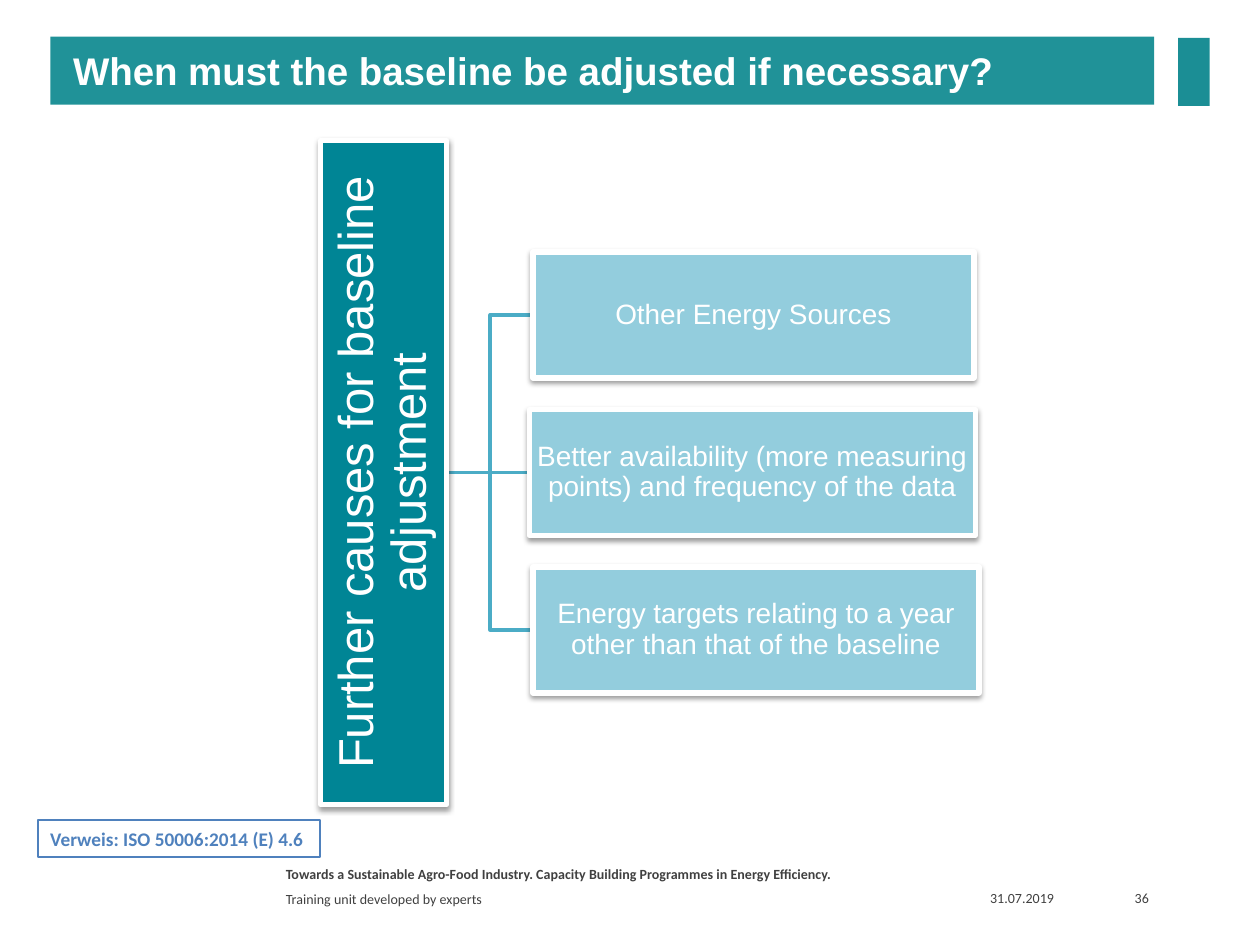
from lxml import etree
from pptx import Presentation
from pptx.dml.color import RGBColor
from pptx.enum.shapes import MSO_CONNECTOR, MSO_SHAPE
from pptx.enum.text import MSO_ANCHOR, MSO_AUTO_SIZE, PP_ALIGN
from pptx.oxml import parse_xml
from pptx.oxml.ns import nsdecls, qn
from pptx.util import Inches, Pt

GREY = "404040"
WHITE = "FFFFFF"
BLUE = "4F81BD"
LINK = "4BACC6"
AXIS_Y = 3.75


def rgb(value):
    return RGBColor.from_string(value)


def write(s, text, size, color, font="Calibri", bold=False, align=PP_ALIGN.LEFT,
          anchor=MSO_ANCHOR.MIDDLE, margins=(0.1, 0.05, 0.1, 0.05), spacing=None, wrap=True):
    tf = s.text_frame
    tf.text = text
    tf.word_wrap = wrap
    tf.auto_size = MSO_AUTO_SIZE.NONE
    tf.vertical_anchor = anchor
    tf.margin_left, tf.margin_top, tf.margin_right, tf.margin_bottom = map(Inches, margins)
    p = tf.paragraphs[0]
    p.alignment = align
    p.line_spacing = spacing
    f = p.runs[0].font
    f.name, f.size, f.bold = font, Pt(size), bold
    f.color.rgb = rgb(color)


def paint(s, fill, line=None, width=1):
    s.fill.solid()
    s.fill.fore_color.rgb = rgb(fill)
    if line:
        s.line.color.rgb = rgb(line)
        s.line.width = Pt(width)
    else:
        s.line.fill.background()


def add_title(slide, text):
    s = slide.shapes.title
    s.left, s.top, s.width, s.height = map(Inches, (0.4, 0.29, 8.76, 0.54))
    s.fill.solid()
    s.fill.fore_color.rgb = rgb("209298")
    write(s, text, 22, WHITE, "Arial", True, margins=(0.18, 0.05, 0.1, 0.05))


def add_rect(slide, box, fill, line=None, width=1):
    s = slide.shapes.add_shape(MSO_SHAPE.RECTANGLE, *map(Inches, box))
    s.shadow.inherit = False
    paint(s, fill, line, width)
    return s


def add_card(slide, box, fill, text, size, margin, rotation=0):
    s = add_rect(slide, box, fill, WHITE, 3)
    s.rotation = rotation
    effects = s._element.spPr.find(qn("a:effectLst"))
    effects.append(parse_xml(
        f'<a:outerShdw {nsdecls("a")} blurRad="{Pt(3.1)}" dist="{Pt(1.6)}" dir="5400000" '
        'rotWithShape="0"><a:srgbClr val="000000"><a:alpha val="38000"/></a:srgbClr></a:outerShdw>'))
    write(s, text, size, WHITE, "Arial", align=PP_ALIGN.CENTER, margins=(margin,) * 4, spacing=0.9)


def add_branch(slide, x, y):
    start, middle = 3.54, 3.89
    if y == AXIS_Y:
        s = slide.shapes.add_connector(
            MSO_CONNECTOR.STRAIGHT, *map(Inches, (start, y, x, y)))
        etree.SubElement(s._element.spPr, qn("a:effectLst"))
    else:
        builder = slide.shapes.build_freeform(Inches(start), Inches(AXIS_Y))
        corners = [(middle, AXIS_Y), (middle, y), (x, y)]
        builder.add_line_segments([(Inches(a), Inches(b)) for a, b in corners], close=False)
        s = builder.convert_to_shape()
        s.shadow.inherit = False
        s.fill.background()
    s.line.color.rgb = rgb(LINK)
    s.line.width = Pt(2)


def add_label(slide, box, text, **style):
    s = slide.shapes.add_textbox(*map(Inches, box))
    write(s, text, 8, GREY, **style)


def main():
    prs = Presentation()
    prs.slide_width, prs.slide_height = Inches(10), Inches(7.5)
    slide = prs.slides.add_slide(prs.slide_layouts[5])

    add_title(slide, "When must the baseline be adjusted if necessary?")
    add_rect(slide, (9.35, 0.3, 0.25, 0.54), "1B8E95")

    causes = [
        (4.23, 3.5, "Other Energy Sources"),
        (4.2, 3.54, "Better availability (more measuring points) and frequency of the data"),
        (4.23, 3.54, "Energy targets relating to a year other than that of the baseline"),
    ]
    tops = [2 + 1.25 * i for i in range(len(causes))]
    for (x, _, _), top in zip(causes, tops):
        add_branch(slide, x, top + 0.5)
    add_card(slide, (0.41, 3.25, 5.27, 1), "008595",
             "Further causes for baseline adjustment", 28, 0.02, 270)
    for (x, width, text), top in zip(causes, tops):
        add_card(slide, (x, top, width, 1), "93CDDD", text, 16, 0.01)

    reference = add_rect(slide, (0.3, 6.51, 2.24, 0.29), WHITE, BLUE)
    write(reference, "Verweis: ISO 50006:2014 (E) 4.6", 11, BLUE, bold=True, wrap=False)

    add_label(slide, (2.17, 6.82, 5.5, 0.21),
              "Towards a Sustainable Agro-Food Industry. Capacity Building Programmes in Energy Efficiency.",
              bold=True, anchor=MSO_ANCHOR.TOP)
    add_label(slide, (2.17, 7.04, 5.5, 0.19), "Training unit developed by experts")
    add_label(slide, (7.76, 7.03, 0.83, 0.2), "31.07.2019")
    add_label(slide, (8.6, 7.03, 0.56, 0.2), "36", align=PP_ALIGN.RIGHT,
              margins=(0.1, 0.05, 0.04, 0.05))
    prs.save("out.pptx")


if __name__ == "__main__":
    main()
